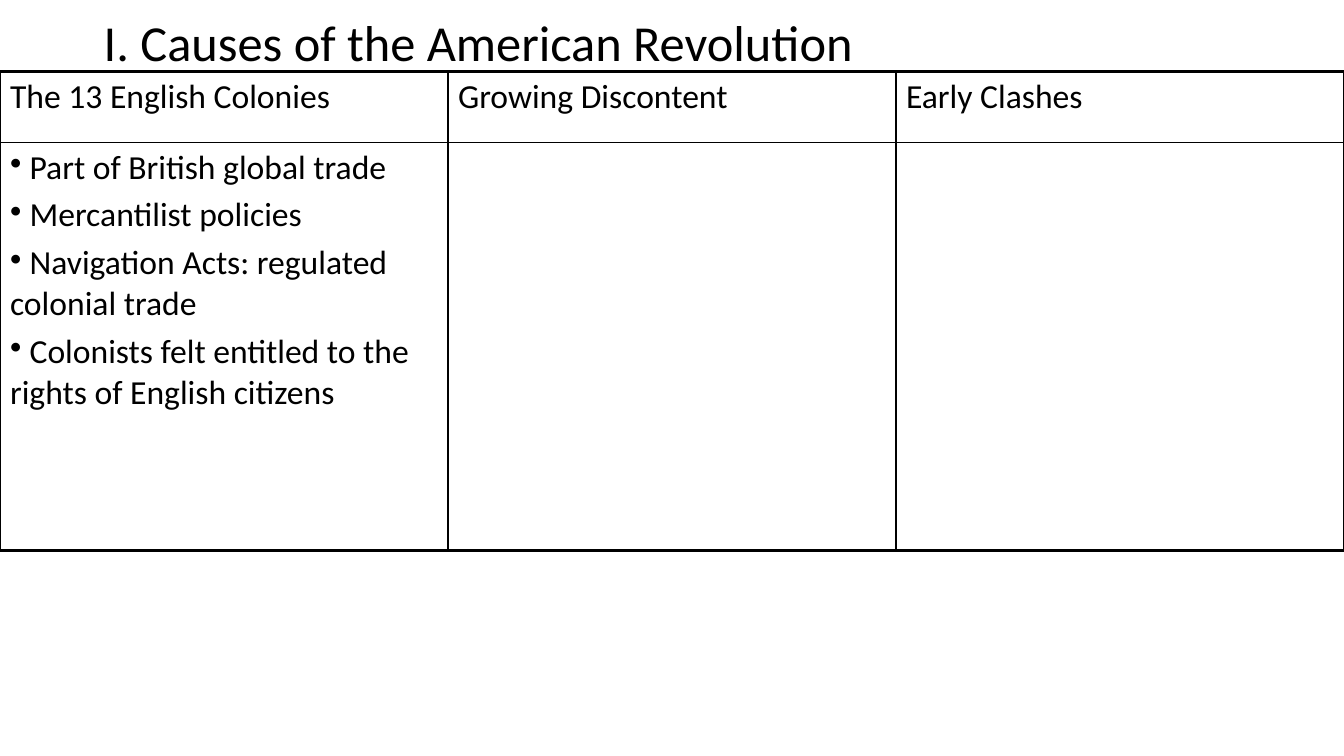
"""Build the slide on the causes of the American Revolution."""
from dataclasses import dataclass

from lxml import etree
from pptx import Presentation
from pptx.dml.color import RGBColor
from pptx.enum import text
from pptx.oxml import ns
from pptx.util import Inches, Pt


@dataclass(frozen=True)
class Theme:
    font: str = "Calibri"
    ink: str = "000000"
    title_size: float = 36
    body_size: float = 24
    paragraph_gap: float = 4.8
    outer_line: float = 2.25
    inner_line: float = 1


@dataclass(frozen=True)
class Topic:
    heading: str
    points: tuple[str, ...] = ()


THEME = Theme()
WIDTH, HEIGHT = 13.33, 7.5
TABLE_TOP = 0.71
ROW_HEIGHTS = (0.7, 4.05)
TITLE = "I. Causes of the American Revolution"
TOPICS = (
    Topic("The 13 English Colonies", (
        " Part of British global trade",
        " Mercantilist policies",
        " Navigation Acts: regulated colonial trade",
        " Colonists felt entitled to the rights of English citizens",
    )),
    Topic("Growing Discontent"),
    Topic("Early Clashes"),
)


def add_run(paragraph, content: str, size: float) -> None:
    run = paragraph.add_run()
    run.text = content
    run.font.name = THEME.font
    run.font.size = Pt(size)
    run.font.color.rgb = RGBColor.from_string(THEME.ink)


def add_bullet(paragraph) -> None:
    properties = paragraph._p.get_or_add_pPr()
    properties.set("marL", "0")
    properties.set("indent", "0")
    etree.SubElement(properties, ns.qn("a:buChar"), char="•")


def add_border(cell, side: str, width: float) -> None:
    properties = cell._tc.get_or_add_tcPr()
    line = etree.SubElement(properties, ns.qn(f"a:ln{side}"), w=str(int(Pt(width))))
    fill = etree.SubElement(line, ns.qn("a:solidFill"))
    etree.SubElement(fill, ns.qn("a:srgbClr"), val=THEME.ink)


def fill_cell(cell, lines: tuple[str, ...], bulleted: bool) -> None:
    frame = cell.text_frame
    for index, content in enumerate(lines):
        paragraph = frame.add_paragraph() if index else frame.paragraphs[0]
        if index:
            paragraph.space_before = Pt(THEME.paragraph_gap)
        if bulleted:
            add_bullet(paragraph)
        add_run(paragraph, content, THEME.body_size)


def add_title(slide) -> None:
    box = slide.shapes.add_textbox(Inches(0.93), 0, Inches(11.5), Inches(1.45))
    frame = box.text_frame
    frame.word_wrap = True
    frame.vertical_anchor = text.MSO_ANCHOR.TOP
    frame.margin_top = Inches(0.18)
    paragraph = frame.paragraphs[0]
    paragraph.line_spacing = 0.9
    add_run(paragraph, TITLE, THEME.title_size)


def add_topics(slide) -> None:
    last_row, last_column = len(ROW_HEIGHTS) - 1, len(TOPICS) - 1
    table = slide.shapes.add_table(
        len(ROW_HEIGHTS), len(TOPICS), 0, Inches(TABLE_TOP),
        Inches(WIDTH), Inches(sum(ROW_HEIGHTS))).table
    table.first_row = table.horz_banding = False
    for row, height in zip(table.rows, ROW_HEIGHTS):
        row.height = Inches(height)
    for column, topic in enumerate(TOPICS):
        table.columns[column].width = Inches(WIDTH / len(TOPICS))
        for row, lines in enumerate(((topic.heading,), topic.points)):
            cell = table.cell(row, column)
            fill_cell(cell, lines, bulleted=row > 0)
            outer_sides = {"L": column == 0, "R": column == last_column,
                           "T": row == 0, "B": row == last_row}
            for side, outer in outer_sides.items():
                add_border(cell, side, THEME.outer_line if outer else THEME.inner_line)
            cell.fill.background()


def main() -> None:
    presentation = Presentation()
    presentation.slide_width = Inches(WIDTH)
    presentation.slide_height = Inches(HEIGHT)
    slide = presentation.slides.add_slide(presentation.slide_layouts[6])
    add_title(slide)
    add_topics(slide)
    presentation.save("out.pptx")


if __name__ == "__main__":
    main()
